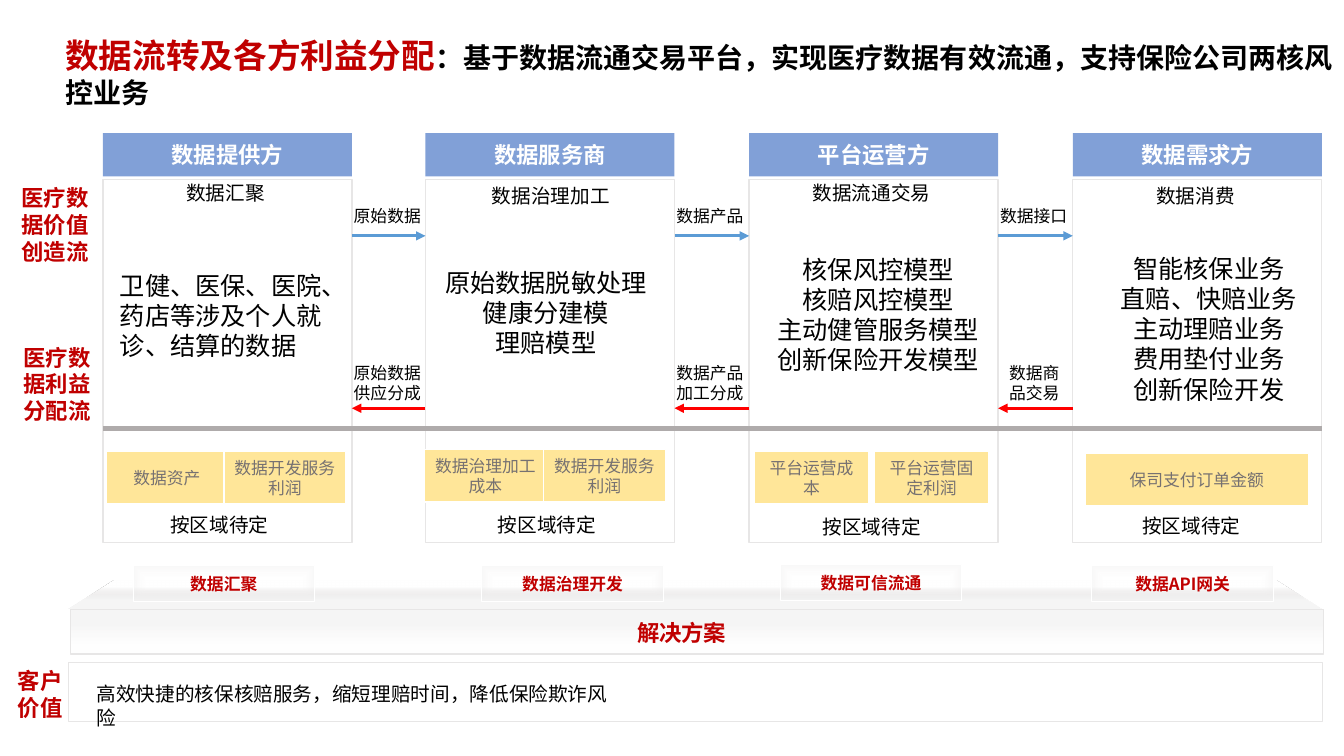
from lxml import etree
from pptx import Presentation
from pptx.dml.color import RGBColor
from pptx.enum.shapes import MSO_CONNECTOR as LINE, MSO_SHAPE as SHAPE
from pptx.enum.text import MSO_ANCHOR as ANCHOR, PP_ALIGN as ALIGN
from pptx.oxml import parse_xml
from pptx.oxml.ns import nsdecls, qn
from pptx.util import Pt

PX = 9144
FONT = "Noto Sans CJK SC"
RED, BLACK, WHITE, GREY = "C00000", "000000", "FFFFFF", "E7E6E6"
COL_X, COL_SPAN, COL_W = 102, 962, 247

TITLE = ("数据流转及各方利益分配", "：基于数据流通交易平台，实现医疗数据有效流通，支持保险公司两核风控业务")
HEADERS = ["数据提供方", "数据服务商", "平台运营方", "数据需求方"]
STAGES = [("数据汇聚", 175, 175, 101), ("数据治理加工", 478, 178, 141),
          ("数据流通交易", 796, 175, 141), ("数据消费", 1137, 178, 101)]
FLOWS = [("原始数据", "原始数据\n供应分成"), ("数据产品", "数据产品\n加工分成"),
         ("数据接口", "数据商\n品交易")]
DETAILS = [
    ("卫健、医保、医院、药店等涉及个人就诊、结算的数据", (109, 263, 233, 101), ALIGN.LEFT),
    ("原始数据脱敏处理\n健康分建模\n理赔模型", (425, 260, 233, 101), ALIGN.CENTER),
    ("核保风控模型\n核赔风控模型\n主动健管服务模型\n创新保险开发模型", (750, 247, 242, 37), ALIGN.CENTER),
    ("智能核保业务\n直赔、快赔业务\n主动理赔业务\n费用垫付业务\n创新保险开发", (1061, 246, 276, 34), ALIGN.CENTER),
]
SHARES = [("保司支付订单金额", 1076, 450, 222),
          ("平台运营成本", 748, 448, 114), ("平台运营固定利润", 867, 448, 114),
          ("数据治理加工成本", 421, 446, 121), ("数据开发服务利润", 539, 446, 121),
          ("数据资产", 105, 448, 121), ("数据开发服务利润", 222, 448, 121)]
PENDING = "按区域待定"
PENDING_AT = [(159, 504), (484, 504), (806, 506), (1123, 505)]
SIDE_LABELS = [("医疗数据价值创造流", (2, 178, 105, 91)), ("医疗数据利益分配流", (4, 336, 105, 91)),
               ("客户价值", (0, 657, 80, 64))]
SOLUTION = "解决方案"
MODULES = [("数据汇聚", 132, 561), ("数据治理开发", 478, 561),
           ("数据可信流通", 774, 560), ("数据API网关", 1083, 561)]
CUSTOMER_VALUE = "高效快捷的核保核赔服务，缩短理赔时间，降低保险欺诈风险"

LINEAR_DOWN = '<a:lin ang="5400000" scaled="0"/>'
LINEAR_UP = '<a:lin ang="16200000" scaled="0"/>'
FROM_CENTRE = '<a:path path="shape"><a:fillToRect l="50000" t="50000" r="50000" b="50000"/></a:path>'

prs = Presentation()
prs.slide_width, prs.slide_height = 1333 * PX, 750 * PX
slide = prs.slides.add_slide(prs.slide_layouts[6])
shapes = slide.shapes


def rgb(color):
    return RGBColor.from_string(color)


def emu(box):
    return [v * PX for v in box]


def style(r, size, color, bold):
    f = r.font
    f.size, f.bold, f.name = Pt(size), bold, FONT
    f.color.rgb = rgb(color)
    ea = etree.SubElement(r._r.get_or_add_rPr(), qn("a:ea"))
    ea.set("typeface", FONT)


def write(sp, text, size, color=BLACK, bold=False, align=ALIGN.LEFT, wrap=True):
    tf = sp.text_frame
    tf.word_wrap = wrap
    tf.text = text
    for p in tf.paragraphs:
        p.alignment = align
        for r in p.runs:
            style(r, size, color, bold)


def label(box, text, size, **look):
    sp = shapes.add_textbox(*emu(box))
    write(sp, text, size, **look)


def block(box, fill=None, line=None, weight=1, kind=SHAPE.RECTANGLE):
    sp = shapes.add_shape(kind, *emu(box))
    sp.shadow.inherit = False
    if fill:
        sp.fill.solid()
        sp.fill.fore_color.rgb = rgb(fill)
    if line:
        sp.line.color.rgb = rgb(line)
        sp.line.width = Pt(weight)
    else:
        sp.line.fill.background()
    sp.text_frame.vertical_anchor = ANCHOR.MIDDLE
    return sp


def gradient(sp, stops, direction):
    gs = "".join(f'<a:gs pos="{pos * 1000}"><a:srgbClr val="{color}">'
                 f'<a:alpha val="{alpha * 1000}"/></a:srgbClr></a:gs>'
                 for pos, color, alpha in stops)
    grad = parse_xml(f'<a:gradFill rotWithShape="1" {nsdecls("a")}>'
                     f'<a:gsLst>{gs}</a:gsLst>{direction}</a:gradFill>')
    sp._element.spPr.find(qn("a:prstGeom")).addnext(grad)


def connect(x1, x2, y, color, weight, arrow=True):
    c = shapes.add_connector(LINE.STRAIGHT, *emu((x1, y, x2, y)))
    c.line.color.rgb = rgb(color)
    c.line.width = Pt(weight)
    if arrow:
        etree.SubElement(c.line._get_or_add_ln(), qn("a:tailEnd")).set("type", "triangle")
    etree.SubElement(c._element.spPr, qn("a:effectLst"))


sp = shapes.add_textbox(*emu((55, 30, 1302, 84)))
sp.text_frame.word_wrap = True
p = sp.text_frame.paragraphs[0]
for text, size, color in zip(TITLE, (24, 20), (RED, BLACK)):
    r = p.add_run()
    r.text = text
    style(r, size, color, True)

columns = [COL_X + i * COL_SPAN // 3 for i in range(len(HEADERS))]
for x, header in zip(columns, HEADERS):
    sp = block((x, 132, COL_W, 43), "4472C4")
    color = sp._element.spPr.find(qn("a:solidFill"))[0]
    etree.SubElement(color, qn("a:alpha")).set("val", "67000")
    write(sp, header, 16, WHITE, True, ALIGN.CENTER)
    block((x, 178, COL_W, 360), WHITE, GREY)

for text, x, y, w in STAGES:
    label((x, y, w, 34), text, 14, wrap=False)

for x, following, (supply, income) in zip(columns, columns[1:], FLOWS):
    right = x + COL_W
    connect(right, following, 234, "5B9BD5", 2.25)
    connect(following, right, 405, "FF0000", 2.25)
    for text, y, h in ((supply, 199, 30), (income, 355, 50)):
        w = 21 + 17 * len(text.split("\n")[0])
        label(((right + following - w) // 2, y, w, h), text, 12, wrap=False)

connect(columns[0], columns[-1] + COL_W, 425, "AFABAB", 3, arrow=False)

for text, x, y, w in SHARES:
    sp = block((x, y, w, 52), "FFE699", WHITE)
    write(sp, text, 12, "767171", align=ALIGN.CENTER)

for x, y in PENDING_AT:
    label((x, y, 130, 34), PENDING, 14)

sp = block((70, 605, 1243, 44), line=GREY)
gradient(sp, [(33, "D0CECE", 20), (100, WHITE, 0)], LINEAR_DOWN)
sp = block((68, 576, 1243, 28), kind=SHAPE.TRAPEZOID)
sp.adjustments[0] = 1.61
gradient(sp, [(33, "D0CECE", 20), (77, WHITE, 100)], LINEAR_UP)
label((622, 609, 110, 37), SOLUTION, 16, color=RED, bold=True, wrap=False)

for text, x, y in MODULES:
    sp = block((x, y, 180, 36), line=WHITE, weight=0.75)
    gradient(sp, [(35, "F1F0F0", 0), (95, "ECEBEB", 32)], FROM_CENTRE)
    write(sp, text, 12, RED, True, ALIGN.CENTER)

block((68, 657, 1244, 59), WHITE, GREY)
for text, box in SIDE_LABELS:
    label(box, text, 16, color=RED, bold=True, align=ALIGN.CENTER)
for text, box, align in DETAILS:
    label(box, text, 18, align=align)
label((86, 672, 540, 34), CUSTOMER_VALUE, 14)

prs.save("out.pptx")
